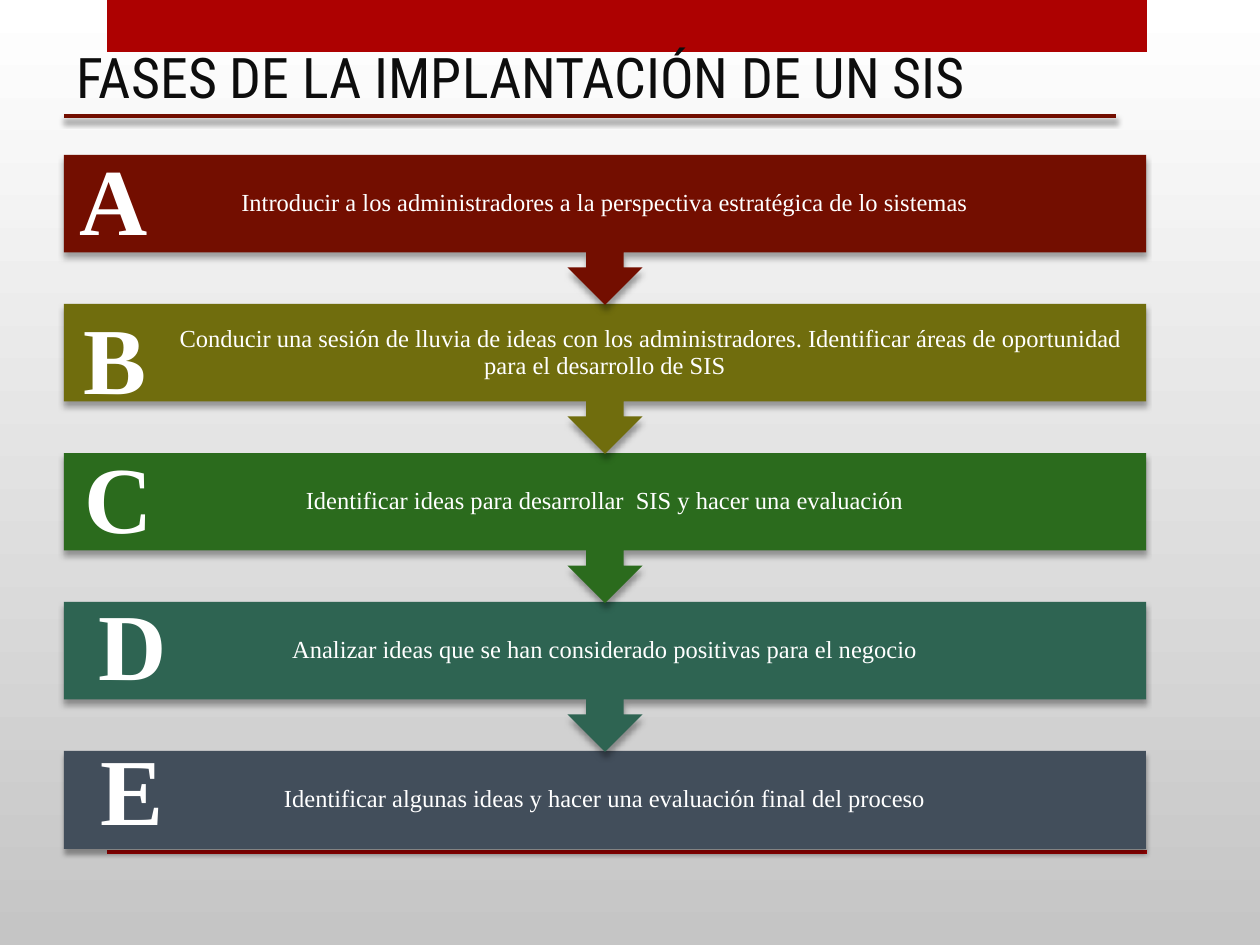
import lxml.etree
import pptx
import pptx.dml.color
import pptx.enum.shapes
import pptx.enum.text
import pptx.oxml
import pptx.oxml.ns
import pptx.util

SHAPE = pptx.enum.shapes.MSO_SHAPE
ANCHOR = pptx.enum.text.MSO_ANCHOR
ALIGN = pptx.enum.text.PP_ALIGN
FIT = pptx.enum.text.MSO_AUTO_SIZE

TITLE = "FASES DE LA IMPLANTACIÓN DE UN SIS"
# letter, letter position, fill, text, first-line indent in px
PHASES = [
    ("A", (67, 135), "730E00",
     "Introducir a los administradores a la perspectiva estratégica de lo sistemas", 0),
    ("B", (69, 294), "706D0D",
     "Conducir una sesión de lluvia de ideas con los administradores. "
     "Identificar áreas de oportunidad para el desarrollo de SIS", 92),
    ("C", (72, 433), "2B6B1D",
     "Identificar ideas para desarrollar  SIS y hacer una evaluación", 0),
    ("D", (86, 580), "2E6452",
     "Analizar ideas que se han considerado positivas para el negocio", 0),
    ("E", (86, 725), "424E5B",
     "Identificar algunas ideas y hacer una evaluación final del proceso", 0),
]
MASTER_BARS = [(107, 0, 1040, 52), (107, 850, 1040, 4)]
BAND_LEFT, BAND_TOP, BAND_WIDTH, BAND_HEIGHT = 64, 155, 1082, 98
BAND_PITCH, CALLOUT_HEIGHT = 149, 150
LETTER_SIZE = (92, 127)
BAND_INSET = 14

BODY_FONT = {"size": pptx.util.Pt(14), "name": "Times New Roman"}
LETTER_FONT = {"size": pptx.util.Pt(54), "name": "Times New Roman", "bold": True}
TITLE_FONT = {"size": pptx.util.Pt(32), "name": "Roboto Condensed"}


def px(value):
    return pptx.util.Emu(round(value * 914400 / 126))


def color(value):
    return pptx.dml.color.RGBColor.from_string(value)


def apply(target, values):
    for name, value in values.items():
        setattr(target, name, value)


def add_shadow(shape):
    namespace = pptx.oxml.ns.nsdecls("a")
    shape._element.spPr.append(pptx.oxml.parse_xml(
        f'<a:effectLst {namespace}><a:outerShdw blurRad="38100" dist="38100" '
        'dir="5400000" rotWithShape="0"><a:srgbClr val="000000">'
        '<a:alpha val="35000"/></a:srgbClr></a:outerShdw></a:effectLst>'))


def add_filled(slide, kind, box, fill):
    shape = slide.shapes.add_shape(kind, *map(px, box))
    shape.fill.solid()
    shape.fill.fore_color.rgb = color(fill)
    shape.line.fill.background()
    return shape


def write(shape, text, font, text_color, alignment, frame_format):
    """Fill a shape with one formatted paragraph and return the paragraph."""
    apply(shape.text_frame, frame_format)
    paragraph = shape.text_frame.paragraphs[0]
    paragraph.alignment = alignment
    run = paragraph.add_run()
    run.text = text
    apply(run.font, font)
    run.font.color.rgb = color(text_color)
    return paragraph


def add_background(slide):
    fill = slide.background.fill
    fill.gradient()
    fill.gradient_angle = 270
    for stop, value in zip(fill.gradient_stops, ("FFFFFF", "C5C5C5")):
        stop.color.rgb = color(value)


def add_heading(slide):
    for box in MASTER_BARS:
        add_filled(slide, SHAPE.RECTANGLE, box, "AD0101").shadow.inherit = False
    title = slide.shapes.title
    apply(title, {"left": px(64), "top": px(29), "width": px(1040), "height": px(87)})
    write(title, TITLE, TITLE_FONT, "0D0D0D", ALIGN.LEFT,
          {"vertical_anchor": ANCHOR.BOTTOM, "auto_size": FIT.NONE, "word_wrap": True})
    slide.shapes._spTree.append(title._element)  # in front of the top bar
    rule = slide.shapes.add_connector(
        pptx.enum.shapes.MSO_CONNECTOR.STRAIGHT, px(64), px(116), px(1116), px(116))
    rule.line.color.rgb = color("730E00")
    rule.line.width = pptx.util.Pt(2.75)
    add_shadow(rule)


def add_band(slide, index):
    _, _, fill, text, indent = PHASES[index]
    top = BAND_TOP + index * BAND_PITCH
    box = (BAND_LEFT, top, BAND_WIDTH, BAND_HEIGHT)
    if index == len(PHASES) - 1:
        band = add_filled(slide, SHAPE.RECTANGLE, box, fill)
    else:
        band = add_filled(slide, SHAPE.UP_ARROW_CALLOUT,
                          (BAND_LEFT, top, BAND_WIDTH, CALLOUT_HEIGHT), fill)
        band.rotation = 180
    add_shadow(band)
    label = slide.shapes.add_textbox(*map(px, box))
    margins = {f"margin_{side}": px(BAND_INSET)
               for side in ("left", "top", "right", "bottom")}
    paragraph = write(label, text, BODY_FONT, "FFFFFF", ALIGN.CENTER,
                      {"word_wrap": True, "vertical_anchor": ANCHOR.MIDDLE, **margins})
    paragraph.line_spacing = 0.9
    if indent:
        paragraph._p.get_or_add_pPr().set("indent", str(px(indent)))


def add_letter(slide, letter, position):
    label = slide.shapes.add_textbox(*map(px, position + LETTER_SIZE))
    write(label, letter, LETTER_FONT, "FFFFFF", ALIGN.CENTER,
          {"word_wrap": False, "auto_size": FIT.SHAPE_TO_FIT_TEXT})


def main():
    presentation = pptx.Presentation()
    presentation.slide_width, presentation.slide_height = px(1260), px(945)
    slide = presentation.slides.add_slide(presentation.slide_layouts[5])
    add_background(slide)
    add_heading(slide)
    # Last phase first, so each arrow tip lies over the band below it
    for index in reversed(range(len(PHASES))):
        add_band(slide, index)
    for letter, position, *_ in PHASES:
        add_letter(slide, letter, position)
    presentation.save("out.pptx")


if __name__ == "__main__":
    main()
